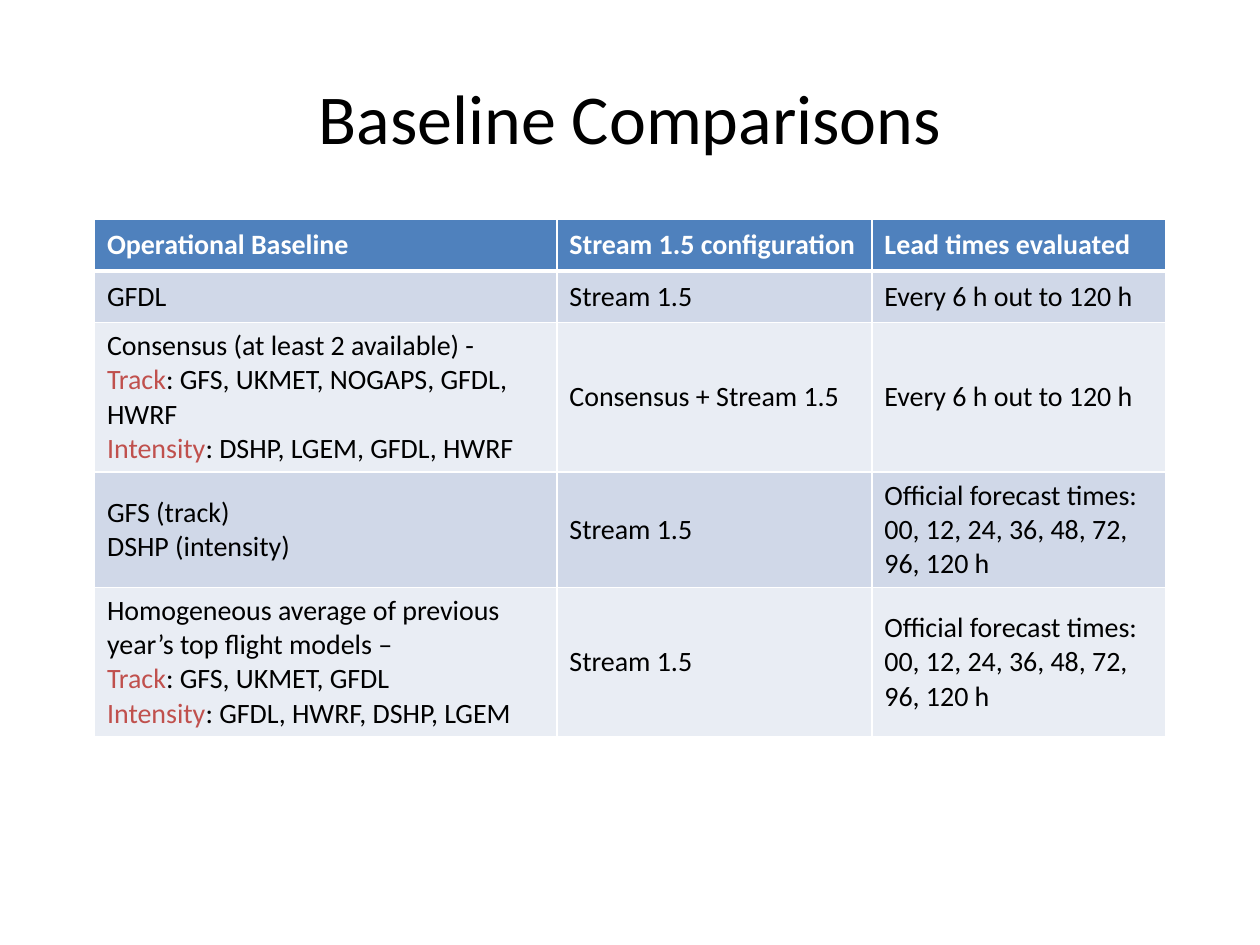
from lxml.etree import SubElement
from pptx import Presentation
from pptx.dml.color import RGBColor
from pptx.enum.text import MSO_ANCHOR, PP_ALIGN
from pptx.oxml.ns import qn
from pptx.util import Inches, Pt

TITLE = "Baseline Comparisons"
TITLE_BOX = (0.5, 0.3, 9, 1.25)
TABLE_ORIGIN = (0.75, 1.74)
COLUMN_WIDTHS = (3.67, 2.5, 2.33)
ROW_HEIGHTS = (0.41, 0.41, 1.17, 0.9, 1.17)
BLACK, WHITE, RED = "000000", "FFFFFF", "C0504D"
HEADER_FILL, BAND_FILLS = "4F81BD", ("E9EDF4", "D0D8E8")
LABELS = ("Track", "Intensity")
OFFICIAL_TIMES = ["Official forecast times:", "00, 12, 24, 36, 48, 72, 96, 120 h"]
EVERY_SIX = ["Every 6 h out to 120 h"]
STREAM = ["Stream 1.5"]
ROWS = [
    (["Operational Baseline"], ["Stream 1.5 configuration"], ["Lead times evaluated"]),
    (["GFDL"], STREAM, EVERY_SIX),
    (
        ["Consensus (at least 2 available) -",
         "Track: GFS, UKMET, NOGAPS, GFDL, HWRF",
         "Intensity: DSHP, LGEM, GFDL, HWRF"],
        ["Consensus + Stream 1.5"],
        EVERY_SIX,
    ),
    (["GFS (track)", "DSHP (intensity)"], STREAM, OFFICIAL_TIMES),
    (
        ["Homogeneous average of previous year’s top flight models –",
         "Track: GFS, UKMET, GFDL",
         "Intensity: GFDL, HWRF, DSHP, LGEM"],
        STREAM,
        OFFICIAL_TIMES,
    ),
]


def color(value):
    return RGBColor.from_string(value)


def add_span(para, text, size, tint, bold=False):
    span = para.add_run()
    span.text = text
    for name, value in {"name": "Calibri", "size": Pt(size), "bold": bold}.items():
        setattr(span.font, name, value)
    span.font.color.rgb = color(tint)


def add_border(cell, side, points):
    line = SubElement(cell._tc.get_or_add_tcPr(), qn(f"a:ln{side}"), w=str(Pt(points)))
    fill = SubElement(line, qn("a:solidFill"))
    SubElement(fill, qn("a:srgbClr"), val=WHITE)


def fill_cell(cell, lines, row):
    header = row == 0
    thick_side = {0: "B", 1: "T"}.get(row)
    for side in "LRTB":
        add_border(cell, side, 3 if side == thick_side else 1)
    cell.fill.solid()
    cell.fill.fore_color.rgb = color(HEADER_FILL if header else BAND_FILLS[row % 2])
    cell.vertical_anchor = MSO_ANCHOR.MIDDLE
    frame = cell.text_frame
    for index, line in enumerate(lines):
        para = frame.add_paragraph() if index else frame.paragraphs[0]
        label, colon, rest = line.partition(":")
        if label in LABELS:
            add_span(para, label, 16, RED)
            line = colon + rest
        add_span(para, line, 16, WHITE if header else BLACK, header)


def add_title(page):
    title = page.shapes.title
    for name, value in zip(("left", "top", "width", "height"), TITLE_BOX):
        setattr(title, name, Inches(value))
    title.text_frame.vertical_anchor = MSO_ANCHOR.MIDDLE
    para = title.text_frame.paragraphs[0]
    para.alignment = PP_ALIGN.CENTER
    add_span(para, TITLE, 40, BLACK)


def add_baseline_table(page):
    bounds = (*TABLE_ORIGIN, sum(COLUMN_WIDTHS), sum(ROW_HEIGHTS))
    table = page.shapes.add_table(
        len(ROWS), len(COLUMN_WIDTHS), *map(Inches, bounds)).table
    for column, width in zip(table.columns, COLUMN_WIDTHS):
        column.width = Inches(width)
    for row, height in zip(table.rows, ROW_HEIGHTS):
        row.height = Inches(height)
    for row, entries in enumerate(ROWS):
        for column, lines in enumerate(entries):
            fill_cell(table.cell(row, column), lines, row)


def main():
    """Build the slide that compares the operational baselines."""
    deck = Presentation()
    deck.slide_width, deck.slide_height = Inches(10), Inches(7.5)
    page = deck.slides.add_slide(deck.slide_layouts[5])
    add_title(page)
    add_baseline_table(page)
    deck.save("out.pptx")


if __name__ == "__main__":
    main()
